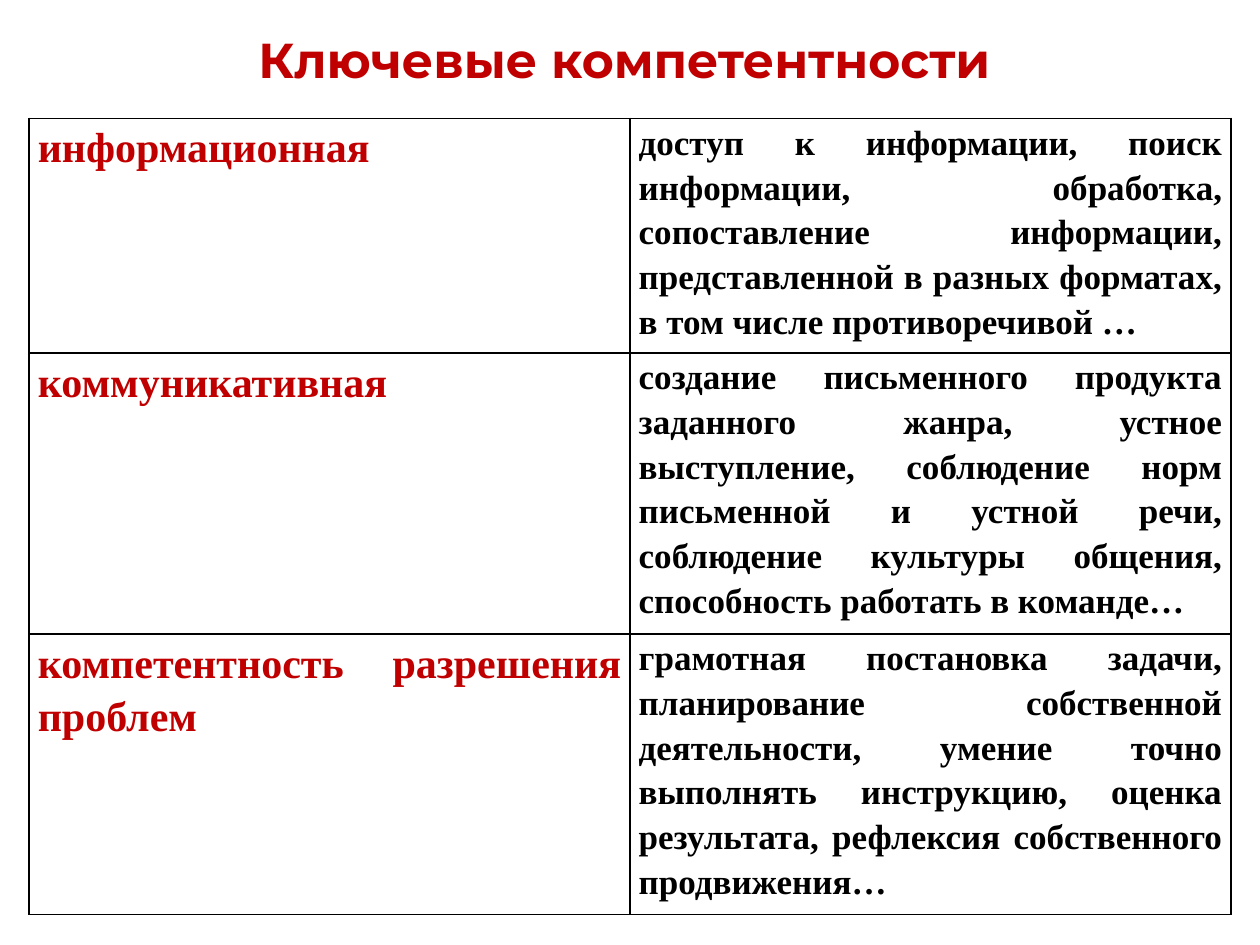
from dataclasses import dataclass

from lxml.etree import SubElement
from pptx import Presentation
from pptx.dml.color import RGBColor
from pptx.enum.text import MSO_ANCHOR, MSO_AUTO_SIZE, PP_ALIGN
from pptx.oxml.ns import qn
from pptx.util import Inches, Pt


@dataclass(frozen=True)
class Theme:
    red: str = "C00000"
    black: str = "000000"
    white: str = "FFFFFF"
    head: str = "Montserrat"
    body: str = "Times New Roman"
    title: int = 28
    term: int = 24
    note: int = 20
    rule: int = 1
    lead: float = 1.15


THEME = Theme()
LEFT = 0.23
TOP = 0.94
COL = 4.77
ROWS = [
    (1.86, "информационная",
     "доступ к информации, поиск информации, обработка, сопоставление "
     "информации, представленной в разных форматах, в том числе "
     "противоречивой …"),
    (2.23, "коммуникативная",
     "создание письменного продукта заданного жанра, устное выступление, "
     "соблюдение норм письменной и устной речи, соблюдение культуры общения, "
     "способность работать в команде…"),
    (2.23, "компетентность разрешения проблем",
     "грамотная постановка задачи, планирование собственной деятельности, "
     "умение точно выполнять инструкцию, оценка результата, рефлексия "
     "собственного продвижения…"),
]


def style(para, face, size, color, align):
    para.alignment = align
    font = para.font
    font.name, font.size, font.bold = face, Pt(size), True
    font.color.rgb = RGBColor.from_string(color)


def add_title(slide, text):
    title = slide.shapes.title
    title.left, title.top = Inches(LEFT), Inches(0.16)
    title.width, title.height = Inches(9.45), Inches(0.62)
    frame = title.text_frame
    frame.text = text
    frame.auto_size = MSO_AUTO_SIZE.NONE
    frame.vertical_anchor = MSO_ANCHOR.MIDDLE
    style(frame.paragraphs[0], THEME.head, THEME.title, THEME.red,
          PP_ALIGN.CENTER)


def add_rules(cell):
    """Draw all four borders; call before the fill, which must follow them."""
    props = cell._tc.get_or_add_tcPr()
    for side in ("lnL", "lnR", "lnT", "lnB"):
        line = SubElement(props, qn(f"a:{side}"), w=str(Pt(THEME.rule)))
        fill = SubElement(line, qn("a:solidFill"))
        SubElement(fill, qn("a:srgbClr"), val=THEME.black)


def fill_cell(cell, text, size, color):
    add_rules(cell)
    cell.fill.solid()
    cell.fill.fore_color.rgb = RGBColor.from_string(THEME.white)
    cell.margin_left = cell.margin_right = Inches(0.07)
    cell.margin_top = cell.margin_bottom = 0
    cell.text = text
    para = cell.text_frame.paragraphs[0]
    para.line_spacing = THEME.lead
    style(para, THEME.body, size, color, PP_ALIGN.JUSTIFY)


def add_grid(slide, rows):
    tall = sum(row[0] for row in rows)
    table = slide.shapes.add_table(
        len(rows), 2, Inches(LEFT), Inches(TOP),
        Inches(2 * COL), Inches(tall)).table
    table.first_row = table.horz_banding = False
    for col in table.columns:
        col.width = Inches(COL)
    for i, (height, term, note) in enumerate(rows):
        table.rows[i].height = Inches(height)
        fill_cell(table.cell(i, 0), term, THEME.term, THEME.red)
        fill_cell(table.cell(i, 1), note, THEME.note, THEME.black)


def main():
    deck = Presentation()
    deck.slide_width, deck.slide_height = Inches(10), Inches(7.5)
    slide = deck.slides.add_slide(deck.slide_layouts[5])
    add_title(slide, "Ключевые компетентности")
    add_grid(slide, ROWS)
    deck.save("out.pptx")


if __name__ == "__main__":
    main()
